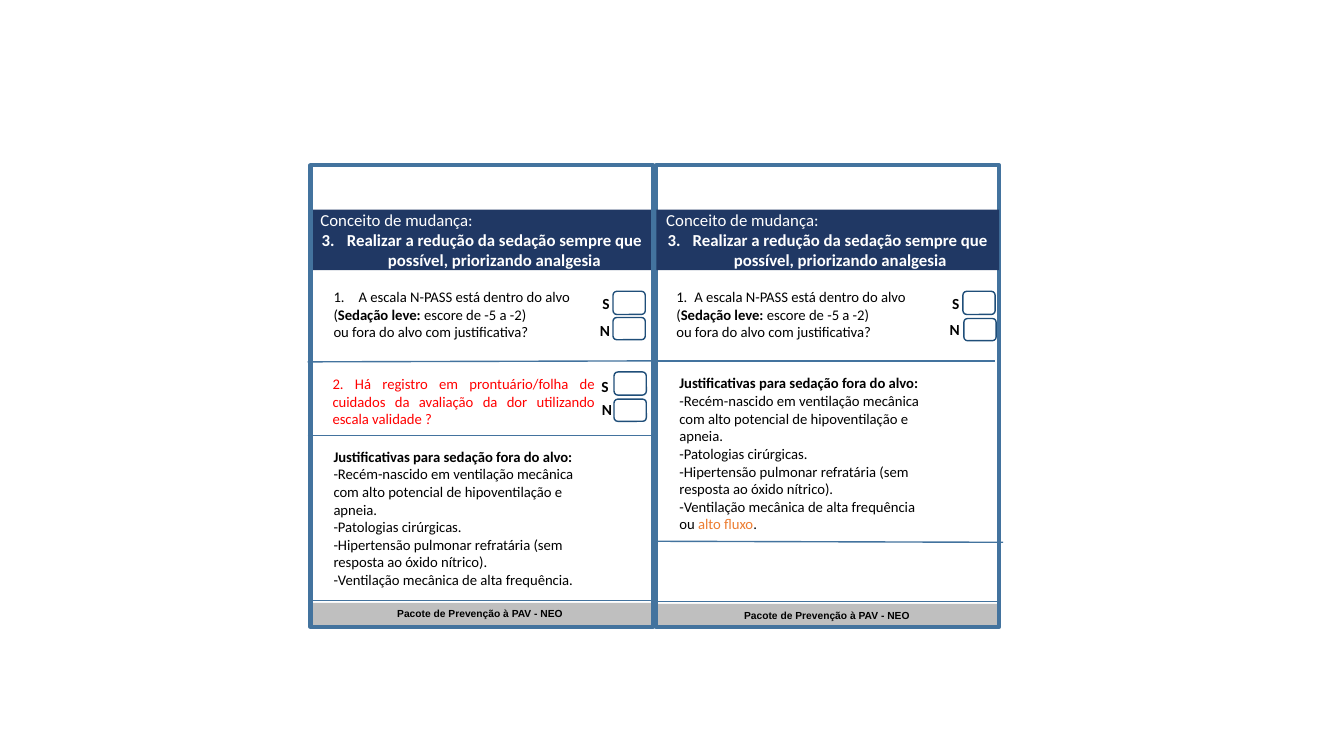
"""Build the slide with two cards on reducing sedation in newborn care."""
from lxml import etree
from pptx import Presentation
from pptx.dml.color import RGBColor
from pptx.enum.shapes import MSO_CONNECTOR, MSO_SHAPE
from pptx.enum.text import MSO_ANCHOR, PP_ALIGN
from pptx.oxml.ns import qn
from pptx.util import Inches, Pt

RECT, ROUND = MSO_SHAPE.RECTANGLE, MSO_SHAPE.ROUNDED_RECTANGLE
LINE = MSO_CONNECTOR.STRAIGHT
MIDDLE = MSO_ANCHOR.MIDDLE
LEFT, CENTER, JUSTIFY = PP_ALIGN.LEFT, PP_ALIGN.CENTER, PP_ALIGN.JUSTIFY

HEX = {"navy": "203864", "steel": "43739E", "box": "1F4E79", "gray": "BFBFBF",
       "black": "000000", "white": "FFFFFF", "red": "FF0000", "orange": "ED7D31"}

FOOT = "Pacote de Prevenção à PAV - NEO"
HEAD = "Conceito de mudança:"
GOAL = "Realizar a redução da sedação sempre que possível, priorizando analgesia"
SCALE = [["1.\tA escala N-PASS está dentro do alvo (", ("Sedação leve: ", "bold"),
          "escore de -5 a -2)"],
         ["ou fora do alvo com justificativa?"]]
PAIN = [["2. Há registro em prontuário/folha de cuidados da avaliação da dor "
         "utilizando escala validade ?"]]
REASONS = [[("Justificativas para sedação fora do alvo:", "bold")],
           ["-Recém-nascido em ventilação mecânica com alto potencial de "
            "hipoventilação e apneia."],
           ["-Patologias cirúrgicas."],
           ["-Hipertensão pulmonar refratária (sem resposta ao óxido nítrico)."]]
VENT = "-Ventilação mecânica de alta frequência"

CARDS = [3.08, 6.51]
FOOTS = [(3.06, 5.98), (6.5, 5.99)]
NOTES = [
    (3.21, 2.89, 2.8, 0.64, 0.23, SCALE, 0.25),
    (6.61, 2.89, 2.8, 0.64, 0.23, SCALE, 0.18),
    (3.21, 4.37, 2.67, 1.9, 0.41, REASONS + [[VENT + "."]], None),
    (6.64, 3.73, 2.67, 1.9, 0.41,
     REASONS + [[VENT + " ou ", ("alto fluxo", "orange"), "."]], None),
]
RULES = [(3.05, 3.59, 6.53, 3.58), (6.52, 3.58, 9.87, 3.58),
         (3.05, 4.32, 6.49, 4.32), (6.51, 5.37, 9.95, 5.38),
         (3.08, 5.96, 6.52, 5.96), (6.5, 5.97, 9.93, 5.97)]
MARKS = [
    ("S", 6.08, 2.89, 5.89, 2.92), ("N", 6.08, 3.15, 5.88, 3.21),
    ("S", 9.55, 2.89, 9.36, 2.92), ("N", 9.56, 3.16, 9.35, 3.2),
    ("S", 6.09, 3.69, 5.88, 3.75), ("N", 6.09, 3.96, 5.9, 3.99),
]
HIGH = {"S": (0.23, 0.17), "N": (0.22, 0.14)}
WIDE = 3.4


def rgb(name):
    return RGBColor.from_string(HEX[name])


def style(para, size, color, align=LEFT, bold=False, font="Calibri"):
    para.alignment = align
    para.font.size = Pt(size)
    para.font.name = font
    para.font.bold = bold
    para.font.color.rgb = rgb(color)


def shape(kind, x, y, w, h, fill=None, line=None, weight=1):
    item = slide.shapes.add_shape(kind, Inches(x), Inches(y), Inches(w), Inches(h))
    item.shadow.inherit = False
    if fill:
        item.fill.solid()
        item.fill.fore_color.rgb = rgb(fill)
    else:
        item.fill.background()
    if line:
        item.line.color.rgb = rgb(line)
        item.line.width = Pt(weight)
    else:
        item.line.fill.background()
    return item


def box(x, y, w, h):
    frame = slide.shapes.add_textbox(Inches(x), Inches(y), Inches(w), Inches(h)).text_frame
    frame.word_wrap = True
    frame.vertical_anchor = MIDDLE
    return frame


def header(x):
    frame = shape(RECT, x, 2.08, WIDE, 0.6, "navy").text_frame
    frame.word_wrap = True
    frame.vertical_anchor = MIDDLE
    first, goal = frame.paragraphs[0], frame.add_paragraph()
    first.text, goal.text = HEAD, GOAL
    style(first, 12, "white")
    style(goal, 12, "white", CENTER, True)
    props = goal._p.get_or_add_pPr()
    props.set("marL", str(Inches(0.25)))
    props.set("indent", str(Inches(-0.25)))
    num = etree.Element(qn("a:buAutoNum"), type="arabicPeriod", startAt="3")
    props.insert(0, num)


def note(x, y, w, h, low, paras, tab=None, color="black", align=LEFT):
    frame = box(x, y, w, h)
    frame.margin_bottom = Inches(low)
    for i, parts in enumerate(paras):
        para = frame.add_paragraph() if i else frame.paragraphs[0]
        style(para, 10.5, color, align)
        for part in parts:
            text, look = (part, None) if isinstance(part, str) else part
            run = para.add_run()
            run.text = text
            if look == "bold":
                run.font.bold = True
            elif look:
                run.font.color.rgb = rgb(look)
    if tab:
        props = frame.paragraphs[0]._p.get_or_add_pPr()
        stops = etree.Element(qn("a:tabLst"))
        etree.SubElement(stops, qn("a:tab"), pos=str(Inches(tab)), algn="l")
        props.insert(0, stops)


def mark(letter, x, y, left, top):
    tall, low = HIGH[letter]
    shape(ROUND, x, y, 0.32, tall, line="box")
    frame = box(left, top, 0.24, low)
    frame.margin_left = frame.margin_right = 0
    frame.margin_top = frame.margin_bottom = 0
    frame.text = letter
    style(frame.paragraphs[0], 11, "black", CENTER, True)


def rule(x, y, right, low):
    item = slide.shapes.add_connector(LINE, Inches(x), Inches(y), Inches(right), Inches(low))
    item.line.color.rgb = rgb("steel")
    item.line.width = Pt(1)
    etree.SubElement(item._element.spPr, qn("a:effectLst"))


deck = Presentation()
deck.slide_width, deck.slide_height = Inches(13.33), Inches(7.5)
slide = deck.slides.add_slide(deck.slide_layouts[6])

for x, y in FOOTS:
    frame = shape(RECT, x, y, WIDE, 0.22, "gray").text_frame
    frame.text = FOOT
    frame.vertical_anchor = MIDDLE
    style(frame.paragraphs[0], 7.3, "black", CENTER, True, "Arial")
header(CARDS[0])
for x in CARDS:
    shape(RECT, x, 1.64, WIDE, 4.58, line="steel", weight=3)
for item in NOTES:
    note(*item)
note(3.2, 3.66, 2.8, 0.64, 0.05, PAIN, color="red", align=JUSTIFY)
for item in RULES:
    rule(*item)
for item in MARKS:
    mark(*item)
header(CARDS[1])

deck.save("out.pptx")
